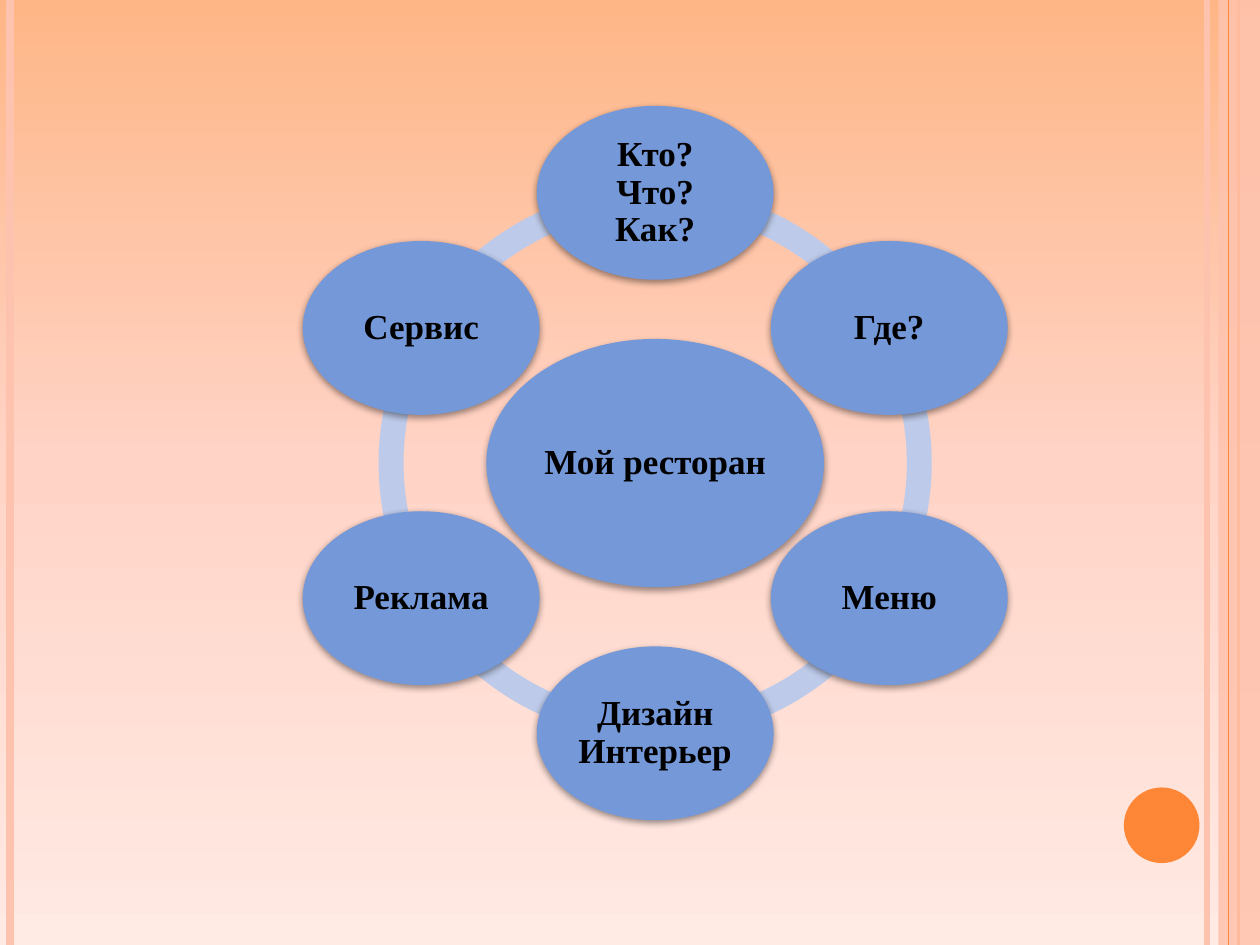
from copy import deepcopy
from math import cos, radians, sin

from lxml.etree import SubElement
from pptx import Presentation
from pptx.dml.color import RGBColor
from pptx.enum.shapes import MSO_CONNECTOR, MSO_SHAPE
from pptx.enum.text import MSO_ANCHOR, PP_ALIGN
from pptx.oxml.ns import qn
from pptx.util import Inches, Pt

ORANGE, PEACH, BLUE, PALE_BLUE = "FE8637", "FEC3AE", "7598D9", "BDCAE9"
WIDTH, HEIGHT = 10, 7.5
CENTER_X, CENTER_Y = 5.2, 3.675


def paint(color_format, color, opacity=100):
    color_format.rgb = RGBColor.from_string(color)
    if opacity < 100:
        node = next(color_format._xFill.iter(qn("a:srgbClr")))
        SubElement(node, qn("a:alpha"), val=str(opacity * 1000))


def add_figure(page, kind, left, top, width, height, color, opacity=100):
    figure = page.shapes.add_shape(
        kind, Inches(left), Inches(top), Inches(width), Inches(height))
    figure.shadow.inherit = False
    figure.fill.solid()
    paint(figure.fill.fore_color, color)
    if opacity < 100:
        node = next(figure._element.spPr.iter(qn("a:srgbClr")))
        SubElement(node, qn("a:alpha"), val=str(opacity * 1000))
    figure.line.fill.background()
    return figure


deck = Presentation()
deck.slide_width, deck.slide_height = Inches(WIDTH), Inches(HEIGHT)
page = deck.slides.add_slide(deck.slide_layouts[6])

backdrop = page.background.fill
backdrop.gradient()
backdrop.gradient_angle = 270
stop_list = next(page._element.iter(qn("a:gsLst")))
stop_list.append(deepcopy(stop_list[0]))
stops = [(0, "FEB687"), (0.5, "FFD4C7"), (1, "FFEAE4")]
for stop, (position, color) in zip(backdrop.gradient_stops, stops):
    stop.position = position
    paint(stop.color, color)

stripes = [(9.58, PEACH, 3), (0.08, PEACH, 4.5), (9.83, ORANGE, 1.5), (9.75, ORANGE, 0.75)]
for x, color, weight in stripes:
    if x == 9.75:
        add_figure(page, MSO_SHAPE.RECTANGLE, 9.67, 0, 0.33, HEIGHT, PEACH, 87)
    stripe = page.shapes.add_connector(
        MSO_CONNECTOR.STRAIGHT, Inches(x), 0, Inches(x), Inches(HEIGHT))
    stripe.line.width = Pt(weight)
    stripe.line.fill.solid()
    stripe.line.color.rgb = RGBColor.from_string(color)
    SubElement(stripe._element.spPr, qn("a:effectLst"))

add_figure(page, MSO_SHAPE.OVAL, 8.92, 6.25, 0.6, 0.6, ORANGE)

ring = 4.39
arcs = [(126, 162), (90, 126), (54, 90), (18, 54), (198, 18), (162, 198)]
for start, end in arcs:
    arc = add_figure(page, MSO_SHAPE.BLOCK_ARC, CENTER_X - ring / 2, CENTER_Y - ring / 2,
                     ring, ring, PALE_BLUE)
    arc.adjustments[0] = start * 0.6
    arc.adjustments[1] = end * 0.6
    arc.adjustments[2] = 0.045

orbit = 2.145
topics = ["Кто? Что? Как?", "Где?", "Меню", "Дизайн Интерьер", "Реклама", "Сервис"]
bubbles = [("Мой ресторан", CENTER_X, CENTER_Y, 2.68, 1.97, 2, 40)]
for index, topic in enumerate(topics):
    angle = radians(60 * index)
    bubbles.append((topic, CENTER_X + orbit * sin(angle), CENTER_Y - orbit * cos(angle),
                    1.88, 1.38, 1.6, 42))

for label, x, y, width, height, distance, opacity in bubbles:
    bubble = add_figure(page, MSO_SHAPE.OVAL, x - width / 2, y - height / 2, width, height, BLUE)
    effects = bubble._element.spPr.find(qn("a:effectLst"))
    shadow = SubElement(effects, qn("a:outerShdw"), blurRad=str(Pt(4)),
                        dist=str(Pt(distance)), dir="5400000", rotWithShape="0")
    shade = SubElement(shadow, qn("a:srgbClr"), val="000000")
    SubElement(shade, qn("a:alpha"), val=str(opacity * 1000))
    frame = bubble.text_frame
    frame.word_wrap = True
    frame.vertical_anchor = MSO_ANCHOR.MIDDLE
    frame.margin_left = frame.margin_right = Inches(0.04)
    frame.margin_top = frame.margin_bottom = Inches(0.03)
    para = frame.paragraphs[0]
    para.text = label
    para.alignment = PP_ALIGN.CENTER
    para.line_spacing = 0.9
    para.font.name = "Times New Roman"
    para.font.size = Pt(20)
    para.font.bold = True
    paint(para.font.color, "000000")

deck.save("out.pptx")
